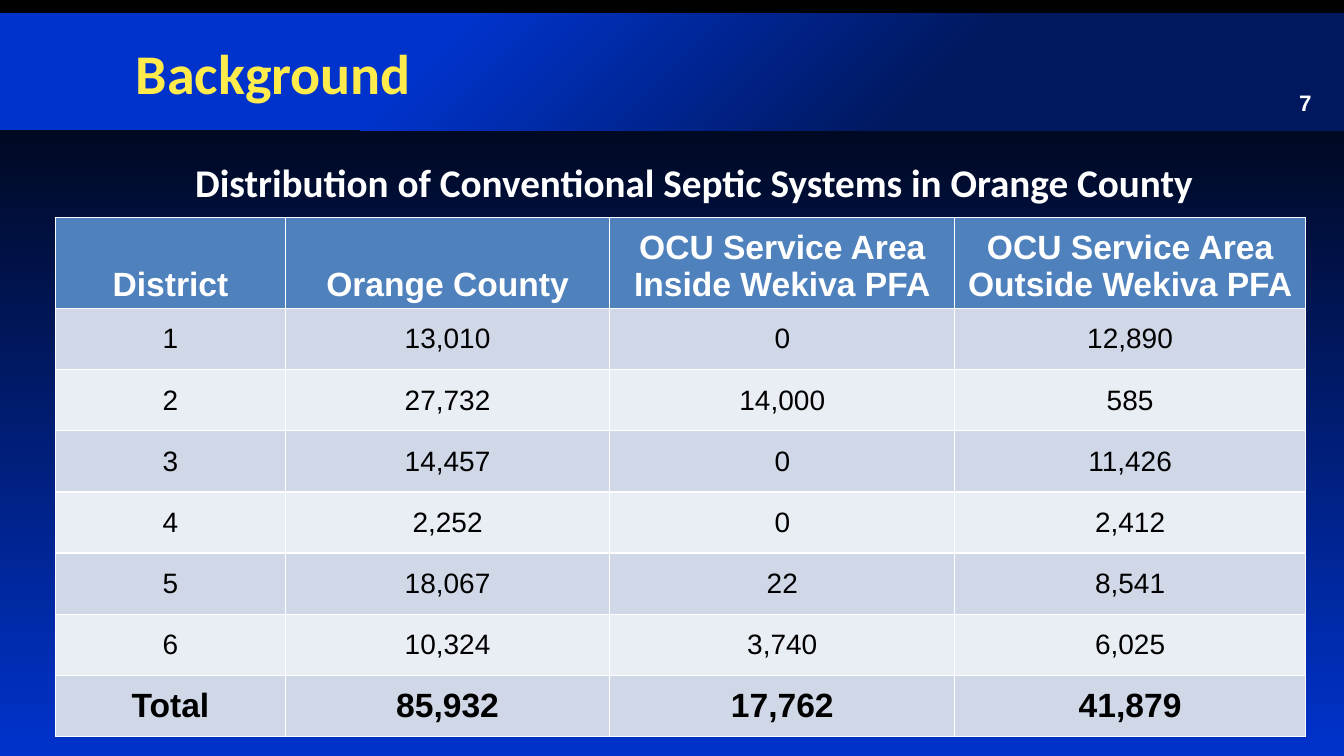
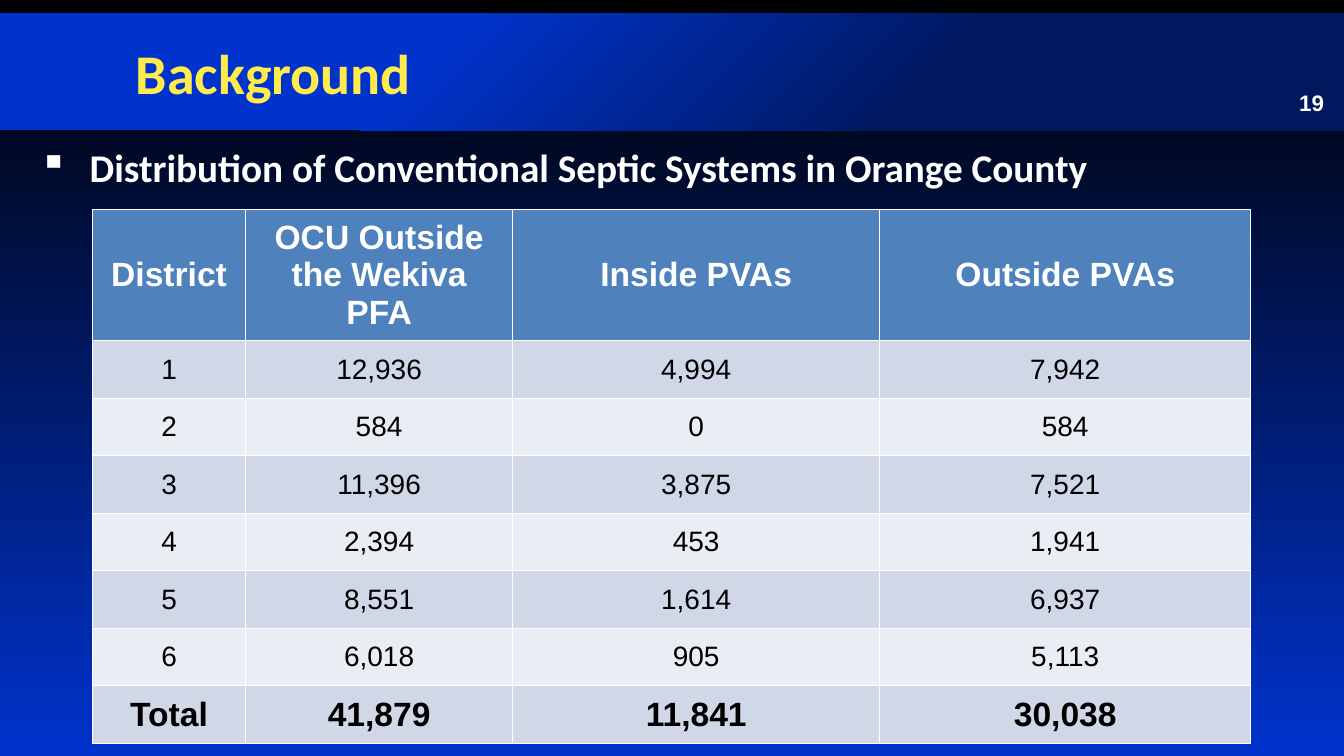
import pptx
import pptx.util
import pptx.dml.color
import pptx.enum.shapes
import pptx.enum.text
import pptx.oxml

Cm = pptx.util.Cm
Pt = pptx.util.Pt
Anchor = pptx.enum.text.MSO_ANCHOR
Align = pptx.enum.text.PP_ALIGN

COLORS = {
    "black": "000000",
    "white": "FFFFFF",
    "blue": "0033CC",
    "navy": "00185E",
    "yellow": "FFEB4B",
    "header": "4F81BD",
    "band_dark": "D0D8E8",
    "band_light": "E9EDF4",
}
HEADING = "Distribution of Conventional Septic Systems in Orange County"

SLIDES = [
    {
        "number": "7",
        "heading_box": (4.67, 3.86, 25.98, 1.45),
        "bullet": False,
        "table_at": (1.4, 5.49),
        "columns": [5.79, 8.18, 8.69, 8.84],
        "header_height": 2.27,
        "row_height": 1.54,
        "header_anchor": Anchor.BOTTOM,
        "rows": [
            ["District", "Orange County", "OCU Service Area\nInside Wekiva PFA",
             "OCU Service Area\nOutside Wekiva PFA"],
            ["1", "13,010", "0", "12,890"],
            ["2", "27,732", "14,000", "585"],
            ["3", "14,457", "0", "11,426"],
            ["4", "2,252", "0", "2,412"],
            ["5", "18,067", "22", "8,541"],
            ["6", "10,324", "3,740", "6,025"],
            ["Total", "85,932", "17,762", "41,879"],
        ],
    },
    {
        "number": "19",
        "heading_box": (0.74, 3.48, 29.46, 1.45),
        "bullet": True,
        "table_at": (2.33, 5.28),
        "columns": [3.86, 6.73, 9.25, 9.35],
        "header_height": 3.3,
        "row_height": 1.45,
        "header_anchor": Anchor.MIDDLE,
        "rows": [
            ["District", "OCU Outside the Wekiva PFA", "Inside PVAs", "Outside PVAs"],
            ["1", "12,936", "4,994", "7,942"],
            ["2", "584", "0", "584"],
            ["3", "11,396", "3,875", "7,521"],
            ["4", "2,394", "453", "1,941"],
            ["5", "8,551", "1,614", "6,937"],
            ["6", "6,018", "905", "5,113"],
            ["Total", "41,879", "11,841", "30,038"],
        ],
    },
]


def style_text(text_frame, font_name, size, color, bold=True, align=Align.LEFT):
    for para in text_frame.paragraphs:
        para.alignment = align
        for span in para.runs:
            span.font.name = font_name
            span.font.size = Pt(size)
            span.font.bold = bold
            span.font.color.rgb = pptx.dml.color.RGBColor.from_string(COLORS[color])


def fill_gradient(fill, angle, stops):
    fill.gradient()
    fill.gradient_angle = angle
    for stop, (position, color) in zip(fill.gradient_stops, stops):
        stop.position = position
        stop.color.rgb = pptx.dml.color.RGBColor.from_string(COLORS[color])


deck = pptx.Presentation()
deck.slide_width = Cm(33.87)
deck.slide_height = Cm(19.05)
fill_gradient(deck.slide_master.background.fill, 270, [(0, "black"), (1, "blue")])

for content in SLIDES:
    slide = deck.slides.add_slide(deck.slide_layouts[5])

    banner = slide.shapes.add_shape(
        pptx.enum.shapes.MSO_SHAPE.RECTANGLE, 0, Cm(0.33), deck.slide_width, Cm(2.95))
    banner.shadow.inherit = False
    banner.line.fill.background()
    fill_gradient(banner.fill, 315, [(0.32, "blue"), (0.69, "navy")])
    slide.shapes.title._element.addprevious(banner._element)

    title = slide.shapes.title
    title.left, title.top, title.width, title.height = Cm(3.17), Cm(0.76), Cm(29.18), Cm(2.11)
    title.text_frame.text = "Background"
    title.text_frame.vertical_anchor = Anchor.MIDDLE
    style_text(title.text_frame, "Calibri", 40, "yellow")

    number_box = slide.shapes.add_textbox(Cm(32.49), Cm(2.11), Cm(1.22), Cm(0.94))
    number_box.text_frame.text = content["number"]
    number_box.text_frame.word_wrap = False
    style_text(number_box.text_frame, "Arial", 16, "white")

    heading_box = slide.shapes.add_textbox(*[Cm(length) for length in content["heading_box"]])
    heading_box.text_frame.text = HEADING
    heading_box.text_frame.word_wrap = True
    if content["bullet"]:
        properties = heading_box.text_frame.paragraphs[0]._p.get_or_add_pPr()
        properties.set("marL", str(Cm(1.27)))
        properties.set("indent", str(-Cm(1.27)))
        bullet = pptx.oxml.parse_xml(
            '<a:buChar xmlns:a="http://schemas.openxmlformats.org/drawingml/2006/main" char="▪"/>')
        properties.append(bullet)
    style_text(heading_box.text_frame, "Calibri", 28, "white")

    rows = content["rows"]
    left, top = content["table_at"]
    heights = [content["header_height"]] + [content["row_height"]] * (len(rows) - 1)
    table = slide.shapes.add_table(
        len(rows), len(rows[0]), Cm(left), Cm(top),
        Cm(sum(content["columns"])), Cm(sum(heights))).table
    for column, width in zip(table.columns, content["columns"]):
        column.width = Cm(width)
    for row_index, values in enumerate(rows):
        table.rows[row_index].height = Cm(heights[row_index])
        is_header = row_index == 0
        is_strong = is_header or row_index == len(rows) - 1
        band = "header" if is_header else "band_dark" if row_index % 2 else "band_light"
        for cell, value in zip(table.rows[row_index].cells, values):
            cell.text_frame.text = value
            cell.vertical_anchor = content["header_anchor"] if is_header else Anchor.MIDDLE
            cell.fill.solid()
            cell.fill.fore_color.rgb = pptx.dml.color.RGBColor.from_string(COLORS[band])
            style_text(cell.text_frame, "Arial", 24 if is_strong else 20,
                       "white" if is_header else "black", is_strong, Align.CENTER)

deck.save("out.pptx")
